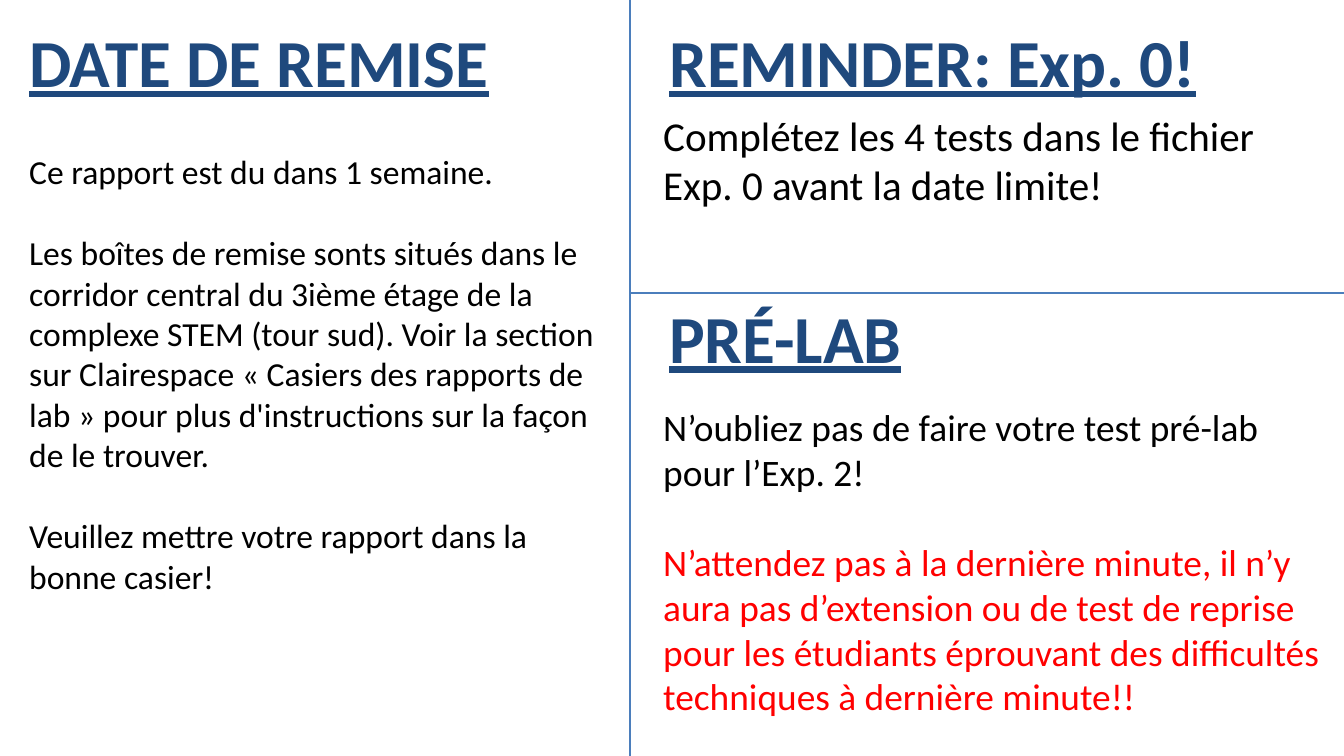
from dataclasses import dataclass

from lxml import etree
from pptx import Presentation
from pptx import util as u
from pptx.dml.color import RGBColor
from pptx.enum import shapes, text
from pptx.oxml.ns import qn


@dataclass(frozen=True)
class Theme:
    font: str = "Calibri"
    heading: str = "1F497D"
    body: str = "000000"
    warning: str = "FF0000"
    divider: str = "4B7EBC"
    heading_size: int = 36
    divider_width: float = 1.5


THEME = Theme()
WIDTH, HEIGHT = 1344, 756
SPLIT_X, SPLIT_Y = 630, 293
INSET = 7
LINE_HEIGHT = 1.22

# Each panel: heading and its box, then body box, top inset, type size, paragraphs
PANELS = [
    dict(
        heading="DATE DE REMISE", heading_box=(16, -3, 640, 126),
        body_box=(16, 144, 603, 461), top_inset=INSET, size=18,
        body=[
            ("Ce rapport est du dans 1 semaine.", THEME.body),
            ("Les boîtes de remise sonts situés dans le corridor central du 3ième étage "
             "de la complexe STEM (tour sud). Voir la section sur Clairespace « Casiers "
             "des rapports de lab » pour plus d'instructions sur la façon de le trouver.",
             THEME.body),
            ("Veuillez mettre votre rapport dans la bonne casier!", THEME.body),
        ],
    ),
    dict(
        heading="REMINDER: Exp. 0!", heading_box=(656, -3, 640, 126),
        body_box=(650, 103, 694, 117), top_inset=INSET, size=22,
        body=[("Complétez les 4 tests dans le fichier Exp. 0 avant la date limite!",
               THEME.body)],
    ),
    dict(
        heading="PRÉ-LAB", heading_box=(656, 273, 492, 126),
        body_box=(650, 345, 694, 328), top_inset=59, size=20,
        body=[
            ("N’oubliez pas de faire votre test pré-lab pour l’Exp. 2!", THEME.body),
            ("N’attendez pas à la dernière minute, il n’y aura pas d’extension ou de "
             "test de reprise pour les étudiants éprouvant des difficultés techniques "
             "à dernière minute!!", THEME.warning),
        ],
    ),
]
DIVIDERS = [
    (SPLIT_X, 0, SPLIT_X, HEIGHT),
    (SPLIT_X, SPLIT_Y, WIDTH, SPLIT_Y),
]


def px(length):
    return u.Emu(round(length * u.Inches(10) / WIDTH))


def add_text(slide, box, paragraphs, size, top_inset=INSET,
             anchor=text.MSO_ANCHOR.TOP, **font_format):
    """Add (words, colour) paragraphs, one empty line's height apart."""
    frame = slide.shapes.add_textbox(*map(px, box)).text_frame
    frame.word_wrap = True
    frame.vertical_anchor = anchor
    frame.margin_top = px(top_inset)
    for index, (words, colour) in enumerate(paragraphs):
        paragraph = frame.paragraphs[0] if index == 0 else frame.add_paragraph()
        if index:
            paragraph.space_before = u.Pt(round(size * LINE_HEIGHT, 1))
        run = paragraph.add_run()
        run.text = words
        font_values = dict(name=THEME.font, size=u.Pt(size), **font_format)
        for attribute, value in font_values.items():
            setattr(run.font, attribute, value)
        run.font.color.rgb = RGBColor.from_string(colour)


def add_divider(slide, ends):
    divider = slide.shapes.add_connector(
        shapes.MSO_CONNECTOR.STRAIGHT, *map(px, ends))
    divider.line.color.rgb = RGBColor.from_string(THEME.divider)
    divider.line.width = u.Pt(THEME.divider_width)
    etree.SubElement(divider._element.spPr, qn("a:effectLst"))


def main():
    deck = Presentation()
    deck.slide_width, deck.slide_height = px(WIDTH), px(HEIGHT)
    slide = deck.slides.add_slide(deck.slide_layouts[6])
    for panel in PANELS:
        add_text(slide, panel["body_box"], panel["body"], panel["size"],
                 panel["top_inset"])
        add_text(slide, panel["heading_box"], [(panel["heading"], THEME.heading)],
                 THEME.heading_size, anchor=text.MSO_ANCHOR.MIDDLE,
                 bold=True, underline=True)
    for ends in DIVIDERS:
        add_divider(slide, ends)
    deck.save("out.pptx")


if __name__ == "__main__":
    main()
